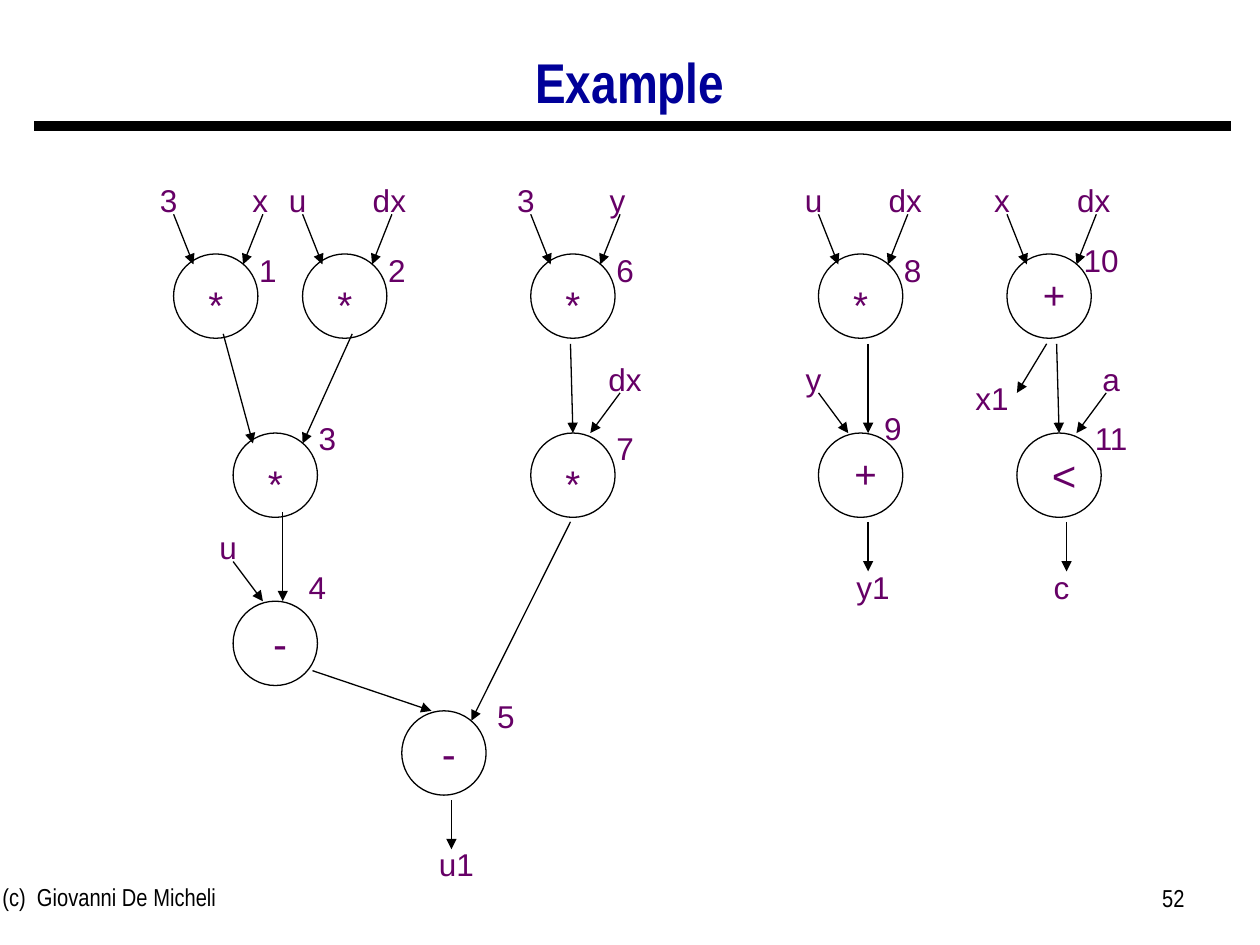
from pptx import Presentation
from pptx.dml.color import RGBColor
from pptx.enum import shapes, text
from pptx.oxml import parse_xml
from pptx.oxml.ns import nsdecls
from pptx.util import Cm, Pt

BLACK = RGBColor(0x00, 0x00, 0x00)
NAVY = RGBColor(0x00, 0x00, 0x99)
PURPLE = RGBColor(0x66, 0x00, 0x66)
DIAMETER = 1.7
CENTER, RIGHT = text.PP_ALIGN.CENTER, text.PP_ALIGN.RIGHT

deck = Presentation()
deck.slide_width, deck.slide_height = Cm(25.4), Cm(19.05)
page = deck.slides.add_slide(deck.slide_layouts[5])


def add_text(words, left, top, width, height=1.02, size=18,
             font="Arial", color=PURPLE, align=CENTER):
    box = page.shapes.add_textbox(Cm(left), Cm(top), Cm(width), Cm(height))
    box.text_frame.word_wrap = True
    para = box.text_frame.paragraphs[0]
    para.alignment = align
    span = para.add_run()
    span.text = words
    span.font.size, span.font.name = Pt(size), font
    span.font.color.rgb = color


def add_line(x1, y1, x2, y2, width=0.75, arrow=True):
    line = page.shapes.add_connector(
        shapes.MSO_CONNECTOR.STRAIGHT, Cm(x1), Cm(y1), Cm(x2), Cm(y2))
    line.line.color.rgb = BLACK
    line.line.width = Pt(width)
    if arrow:
        line.line._get_or_add_ln().append(
            parse_xml(f'<a:tailEnd {nsdecls("a")} type="triangle"/>'))
    line._element.spPr.append(parse_xml(f'<a:effectLst {nsdecls("a")}/>'))
    return line


# Title, rule and footer
title = page.shapes.title
title.left, title.top, title.width, title.height = Cm(1.9), Cm(0.56), Cm(21.6), Cm(2.34)
title.text_frame.vertical_anchor = text.MSO_ANCHOR.MIDDLE
para = title.text_frame.paragraphs[0]
para.alignment, para.line_spacing = CENTER, 0.9
span = para.add_run()
span.text = "Example"
span.font.size, span.font.name, span.font.bold = Pt(32), "Arial Narrow", True
span.font.color.rgb = NAVY

add_line(0.69, 2.54, 24.82, 2.54, width=6, arrow=False)
add_text("(c)  Giovanni De Micheli", -0.2, 17.65, 8.05, 1.32, 14, "Arial Narrow", BLACK, None)
add_text("52", 18.21, 17.68, 5.92, 1.32, 14, "Arial Narrow", BLACK, RIGHT)

# Operations: number, operator, circle left and top, number offset and top
operations = [
    ("1", "*", 3.5, 5.12, 1.9, 4.93),
    ("2", "*", 6.1, 5.12, 1.9, 4.93),
    ("6", "*", 10.7, 5.12, 1.9, 4.93),
    ("8", "*", 16.5, 5.12, 1.9, 4.93),
    ("10", "+", 20.3, 5.12, 1.9, 4.73),
    ("3", "*", 4.7, 8.73, 1.9, 8.33),
    ("7", "*", 10.7, 8.73, 1.9, 8.53),
    ("9", "+", 16.5, 8.73, 1.5, 8.13),
    ("11", "<", 20.5, 8.73, 1.9, 8.33),
    ("4", "-", 4.7, 12.12, 1.7, 11.33),
    ("5", "-", 8.1, 14.33, 2.1, 13.92),
]
circles = {}
for number, operator, left, top, offset, number_top in operations:
    circle = page.shapes.add_shape(
        shapes.MSO_SHAPE.OVAL, Cm(left), Cm(top), Cm(DIAMETER), Cm(DIAMETER))
    circle.shadow.inherit = False
    circle.fill.background()
    circle.line.color.rgb = BLACK
    circle.line.width = Pt(0.75)
    circles[number] = circle
    drop, width = (0.42, 1.28) if operator == "*" else (0.21, 1.48)
    size = 24 if operator in "<-" else 22
    add_text(operator, left + 0.21, top + drop, width, 1.2, size)
    label_width = 0.6 + 0.4 * len(number)
    add_text(number, left + offset - label_width / 2, number_top, label_width)

# Two inputs above each operation of the first row
inputs = [("3", "x"), ("u", "dx"), ("3", "y"), ("u", "dx"), ("x", "dx")]
for (first, second), operation in zip(inputs, operations):
    left = operation[2]
    add_line(left, 4.32, left + 0.4, 5.33)
    add_line(left + 1.8, 4.32, left + 1.4, 5.33)
    for name, center in ((first, left - 0.1), (second, left + 1.75)):
        label_width = 0.6 + 0.4 * len(name)
        add_text(name, center - label_width / 2, 3.53, label_width)

# Other inputs and outputs: name, center, top
for name, center, top in [
    ("dx", 12.6, 7.13), ("y", 16.4, 7.13), ("a", 22.4, 7.13), ("u", 4.6, 10.52),
    ("x1", 20, 7.52), ("y1", 17.6, 11.33), ("c", 21.4, 11.33), ("u1", 9.2, 16.92),
]:
    label_width = 0.6 + 0.4 * len(name)
    add_text(name, center - label_width / 2, top, label_width)

# Data flow between operations, inputs and outputs
for ends in [
    (4.5, 6.73, 5.1, 8.94), (7.1, 6.73, 6.1, 8.94),       # 1, 2 to 3
    (12.5, 7.92, 11.9, 8.73),                             # dx to 7
    (16.5, 7.92, 17.1, 8.73), (17.5, 6.93, 17.5, 8.73),   # y, 8 to 9
    (22.3, 7.92, 21.7, 8.73),                             # a to 11
    (4.7, 11.32, 5.3, 12.12), (5.7, 10.32, 5.7, 12.12),   # u, 3 to 4
    (6.3, 13.52, 8.7, 14.33), (11.5, 10.52, 9.5, 14.53),  # 4, 7 to 5
    (21.1, 6.93, 20.5, 7.92),                             # 10 to x1
    (17.5, 10.52, 17.5, 11.52),                           # 9 to y1
    (21.5, 10.52, 21.5, 11.52),                           # 11 to c
    (9.1, 16.13, 9.1, 17.12),                             # 5 to u1
]:
    add_line(*ends)
add_line(11.5, 6.93, 11.55, 8.73).end_connect(circles["7"], 0)
add_line(21.3, 6.93, 21.35, 8.73).end_connect(circles["11"], 0)

deck.save("out.pptx")
